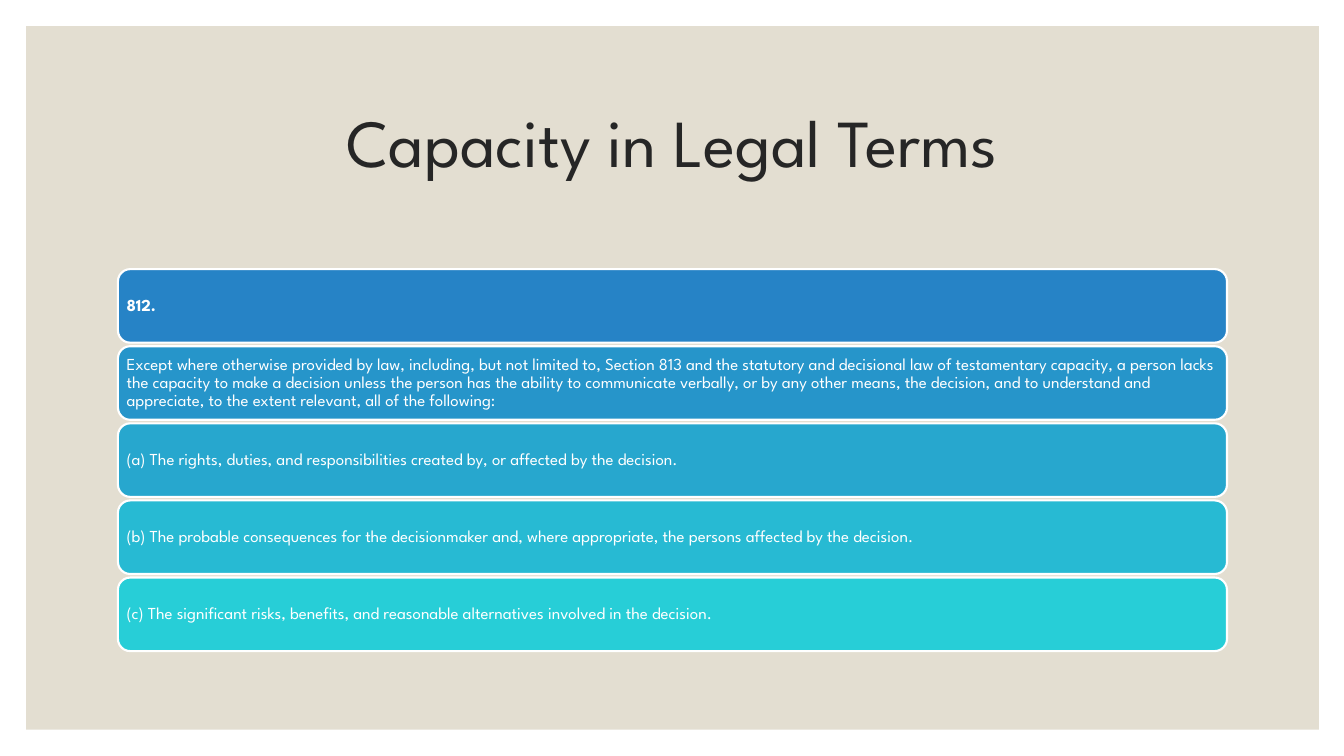
from pptx import Presentation
from pptx.dml.color import RGBColor
from pptx.enum.shapes import MSO_SHAPE
from pptx.enum.text import MSO_ANCHOR, PP_ALIGN
from pptx.util import Inches, Pt

WHITE = RGBColor(0xFF, 0xFF, 0xFF)
SAND = RGBColor(0xE3, 0xDE, 0xD1)
INK = RGBColor(0x26, 0x26, 0x26)
FACE = "League Spartan"

TITLE = "Capacity in Legal Terms"
BARS = [
    ("812.", RGBColor(0x26, 0x83, 0xC6), True),
    ("Except where otherwise provided by law, including, but not limited to, "
     "Section 813 and the statutory and decisional law of testamentary capacity, "
     "a person lacks the capacity to make a decision unless the person has the "
     "ability to communicate verbally, or by any other means, the decision, and "
     "to understand and appreciate, to the extent relevant, all of the following:",
     RGBColor(0x26, 0x95, 0xCA), False),
    ("(a) The rights, duties, and responsibilities created by, or affected by "
     "the decision.", RGBColor(0x27, 0xA7, 0xCE), False),
    ("(b) The probable consequences for the decisionmaker and, where "
     "appropriate, the persons affected by the decision.",
     RGBColor(0x27, 0xBA, 0xD3), False),
    ("(c) The significant risks, benefits, and reasonable alternatives involved "
     "in the decision.", RGBColor(0x27, 0xCE, 0xD7), False),
]

LEFT, WIDTH = 1.17, 11
TOP, LAST, HEIGHT = 2.67, 5.73, 0.73
STEP = (LAST - TOP) / (len(BARS) - 1)


def assign(item, values):
    for name, value in values.items():
        setattr(item, name, value)


def place(item, left, top, width, height):
    assign(item, {"left": Inches(left), "top": Inches(top),
                  "width": Inches(width), "height": Inches(height)})


def write(shape, text, size, color, align, bold, inset):
    frame = shape.text_frame
    frame.text = text
    assign(frame, {"word_wrap": True, "vertical_anchor": MSO_ANCHOR.MIDDLE})
    for side in ("left", "right", "top", "bottom"):
        setattr(frame, f"margin_{side}", Inches(inset))
    para = frame.paragraphs[0]
    assign(para, {"alignment": align, "line_spacing": 0.9})
    assign(para.font, {"name": FACE, "size": Pt(size), "bold": bold})
    para.font.color.rgb = color


def block(slide, kind, box, fill):
    shape = slide.shapes.add_shape(kind, *map(Inches, box))
    shape.shadow.inherit = False
    shape.fill.solid()
    shape.fill.fore_color.rgb = fill
    return shape


def main():
    deck = Presentation()
    assign(deck, {"slide_width": Inches(13.33), "slide_height": Inches(7.5)})
    slide = deck.slides.add_slide(deck.slide_layouts[5])

    panel = block(slide, MSO_SHAPE.RECTANGLE, (0.26, 0.26, 12.82, 6.98), SAND)
    panel.line.fill.background()
    title = slide.shapes.title
    title._element.addprevious(panel._element)  # panel goes behind the title
    place(title, LEFT, 0.7, WIDTH, 1.5)
    write(title, TITLE, 48, INK, PP_ALIGN.CENTER, False, 0.05)

    for row, (text, fill, bold) in enumerate(BARS):
        box = (LEFT, TOP + row * STEP, WIDTH, HEIGHT)
        bar = block(slide, MSO_SHAPE.ROUNDED_RECTANGLE, box, fill)
        bar.line.color.rgb = WHITE
        bar.line.width = Pt(1.5)
        write(bar, text, 12, WHITE, PP_ALIGN.LEFT, bold, 0.05)

    deck.save("out.pptx")


if __name__ == "__main__":
    main()
